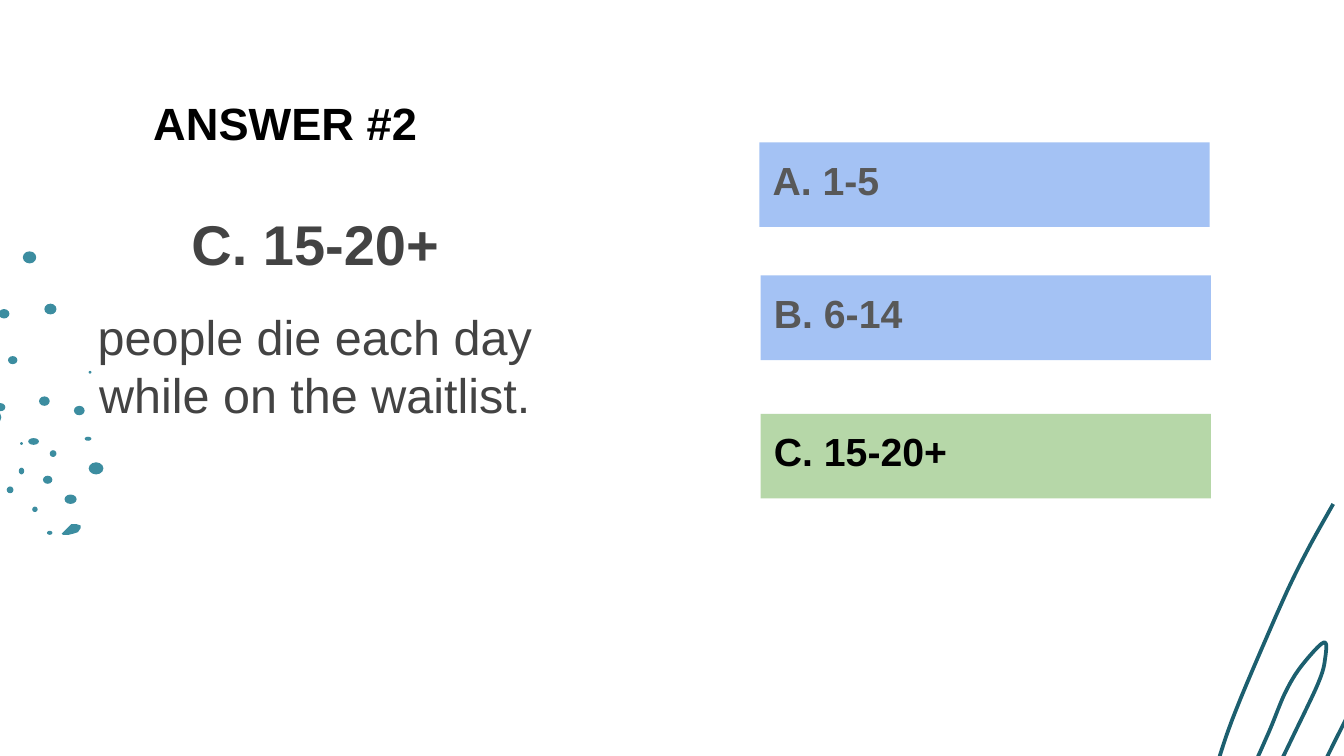
import pptx
import pptx.util
from pptx.dml.color import RGBColor
from pptx.enum.shapes import MSO_SHAPE
from pptx.enum.text import MSO_ANCHOR, MSO_AUTO_SIZE, PP_ALIGN
from pptx.util import Inches

# Colours and font
FONT = "Arial"
BLACK = RGBColor(0x00, 0x00, 0x00)
DARK_GRAY = RGBColor(0x43, 0x43, 0x43)
GRAY = RGBColor(0x58, 0x58, 0x58)
BLUE = RGBColor(0xA4, 0xC2, 0xF4)
GREEN = RGBColor(0xB6, 0xD7, 0xA8)
TEAL = RGBColor(0x3C, 0x8D, 0xA0)
DARK_TEAL = RGBColor(0x1C, 0x5F, 0x6F)

# Content
TITLE = "ANSWER #2"
BODY = [  # text, size, bold, space before
    ("C. 15-20+", 30, True, 0),
    ("people die each day while on the waitlist.", 26, False, 16),
]
OPTIONS = [  # text, left, top, fill, text colour
    ("A. 1-5", 5.65, 1.06, BLUE, GRAY),
    ("B. 6-14", 5.66, 2.05, BLUE, GRAY),
    ("C. 15-20+", 5.66, 3.08, GREEN, BLACK),
]
OPTION_WIDTH, BAR_HEIGHT, LABEL_HEIGHT = 3.35, 0.63, 0.52

# Decoration, in inches
DOTS = [  # left, top, width, height
    (-0.12, 3.05, 0.13, 0.11), (0.15, 3.29, 0.02, 0.02), (0.14, 3.48, 0.04, 0.05),
    (0.24, 3.77, 0.04, 0.04), (0.35, 3.95, 0.04, 0.03), (0.48, 3.68, 0.09, 0.07),
    (0.32, 3.54, 0.07, 0.06), (0.05, 3.62, 0.05, 0.05), (0.37, 3.35, 0.05, 0.05),
    (0.21, 3.26, 0.08, 0.05), (0.29, 2.95, 0.08, 0.07), (-0.03, 3.00, 0.07, 0.06),
    (0.06, 2.65, 0.07, 0.06), (-0.01, 2.30, 0.08, 0.07), (0.66, 2.76, 0.02, 0.02),
    (0.55, 3.02, 0.08, 0.07), (0.63, 3.25, 0.05, 0.03), (0.66, 3.44, 0.11, 0.09),
    (0.33, 2.26, 0.09, 0.08), (0.17, 1.87, 0.10, 0.09),
]
LEAF = [(0.46, 3.97), (0.50, 3.93), (0.53, 3.90), (0.57, 3.90), (0.60, 3.91),
        (0.60, 3.93), (0.58, 3.96), (0.55, 3.97), (0.51, 3.98), (0.47, 3.98)]
SCRIBBLE = [
    (9.92, 3.75), (9.72, 4.11), (9.54, 4.48), (9.23, 5.20), (9.09, 5.58), (9.06, 5.73),
    (9.10, 5.85), (9.18, 5.87), (9.28, 5.79), (9.44, 5.45), (9.56, 5.16), (9.68, 4.96),
    (9.85, 4.78), (9.86, 4.90), (9.81, 5.08), (9.63, 5.46), (9.45, 5.83), (9.33, 6.08),
    (9.29, 6.27), (9.36, 6.38), (9.48, 6.37), (9.60, 6.24), (9.74, 5.92), (9.92, 5.54),
    (10.12, 5.16), (10.26, 4.98), (10.39, 4.88), (10.41, 5.10), (10.28, 5.45),
    (10.10, 5.80), (9.90, 6.20), (9.75, 6.53), (9.73, 6.68), (9.82, 6.70), (9.94, 6.60),
    (10.06, 6.40), (10.20, 6.07), (10.40, 5.62), (10.60, 5.28), (10.72, 5.18),
    (10.82, 5.20), (10.83, 5.40), (10.76, 5.62), (10.60, 5.93), (10.40, 6.27),
    (10.20, 6.60), (10.10, 6.80), (10.12, 6.93), (10.25, 6.97), (10.40, 6.86),
    (10.55, 6.58), (11.01, 5.65),
]


def smooth_curve(points, steps=6):
    """Return points on a Catmull-Rom curve through the given points."""
    padded = [points[0], *points, points[-1]]
    curve = [points[0]]
    for a, b, c, d in zip(padded, padded[1:], padded[2:], padded[3:]):
        for step in range(1, steps + 1):
            t = step / steps
            curve.append(tuple(
                0.5 * (2 * q + (r - p) * t + (2 * p - 5 * q + 4 * r - s) * t ** 2
                       + (3 * q - p - 3 * r + s) * t ** 3)
                for p, q, r, s in zip(a, b, c, d)))
    return curve


def add_outline(slide, points, close):
    corners = [(Inches(x), Inches(y)) for x, y in points]
    builder = slide.shapes.build_freeform(*corners[0])
    builder.add_line_segments(corners[1:], close=close)
    shape = builder.convert_to_shape()
    shape.shadow.inherit = False
    return shape


def fill_plain(shape, color):
    shape.fill.solid()
    shape.fill.fore_color.rgb = color
    shape.line.fill.background()
    shape.shadow.inherit = False


def place(shape, left, top, width, height):
    shape.left, shape.top = Inches(left), Inches(top)
    shape.width, shape.height = Inches(width), Inches(height)


def set_frame(text_frame, auto_size=MSO_AUTO_SIZE.NONE):
    text_frame.word_wrap = True
    text_frame.auto_size = auto_size
    text_frame.vertical_anchor = MSO_ANCHOR.TOP
    text_frame.margin_left = text_frame.margin_right = Inches(0.1)
    text_frame.margin_top = text_frame.margin_bottom = Inches(0.1)


def set_text(paragraph, text, size, color, bold=True, align=PP_ALIGN.LEFT):
    paragraph.text = text
    paragraph.alignment = align
    font = paragraph.runs[0].font
    font.name, font.size, font.bold = FONT, pptx.util.Pt(size), bold
    font.color.rgb = color


def main():
    # 16:9 slide
    presentation = pptx.Presentation()
    presentation.slide_width = Inches(10)
    presentation.slide_height = presentation.slide_width * 9 // 16
    slide = presentation.slides.add_slide(presentation.slide_layouts[1])

    # Dots and leaf on the left, scribble on the right
    for dot in DOTS:
        fill_plain(slide.shapes.add_shape(MSO_SHAPE.OVAL, *map(Inches, dot)), TEAL)
    fill_plain(add_outline(slide, LEAF, close=True), TEAL)
    scribble = add_outline(slide, smooth_curve(SCRIBBLE), close=False)
    scribble.fill.background()
    scribble.line.color.rgb = DARK_TEAL
    scribble.line.width = pptx.util.Pt(2)

    # Title
    title = slide.shapes.title
    place(title, 1.04, 0.61, 8.92, 0.63)
    set_frame(title.text_frame)
    set_text(title.text_frame.paragraphs[0], TITLE, 24.2, BLACK)

    # Answer text
    body = slide.placeholders[1]
    place(body, 0.55, 1.46, 3.59, 3.84)
    set_frame(body.text_frame)
    for index, (text, size, bold, space) in enumerate(BODY):
        paragraph = (body.text_frame.add_paragraph() if index
                     else body.text_frame.paragraphs[0])
        set_text(paragraph, text, size, DARK_GRAY, bold, PP_ALIGN.CENTER)
        paragraph.space_before = pptx.util.Pt(space)
        properties = paragraph._p.get_or_add_pPr()
        properties.set("marL", "0")
        properties.set("indent", "0")
        properties.append(pptx.oxml.parse_xml(
            '<a:buNone xmlns:a="http://schemas.openxmlformats.org/drawingml/2006/main"/>'))

    # Answer options: a bar with its label, grouped
    for text, left, top, fill, color in OPTIONS:
        option = slide.shapes.add_group_shape()
        corner = Inches(left), Inches(top), Inches(OPTION_WIDTH)
        bar = option.shapes.add_shape(MSO_SHAPE.RECTANGLE, *corner, Inches(BAR_HEIGHT))
        fill_plain(bar, fill)
        label = option.shapes.add_textbox(*corner, Inches(LABEL_HEIGHT))
        set_frame(label.text_frame, MSO_AUTO_SIZE.SHAPE_TO_FIT_TEXT)
        set_text(label.text_frame.paragraphs[0], text, 21, color)

    presentation.save("out.pptx")


if __name__ == "__main__":
    main()
